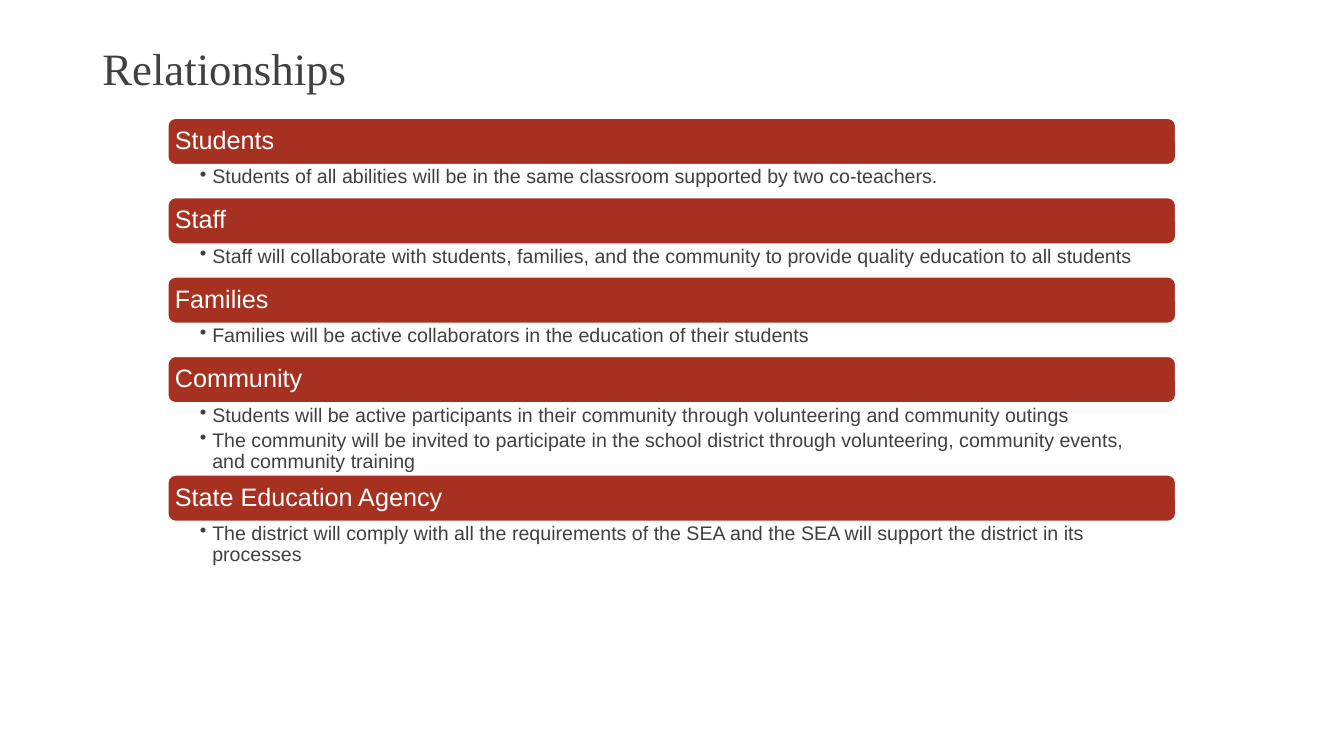
from dataclasses import dataclass

from lxml.etree import SubElement
from pptx import Presentation
from pptx.dml.color import RGBColor
from pptx.enum.shapes import MSO_SHAPE as Shape
from pptx.enum.text import MSO_ANCHOR as Anchor, PP_ALIGN as Align
from pptx.oxml.ns import qn
from pptx.text.text import TextFrame, _Paragraph as Paragraph
from pptx.util import Cm, Pt


@dataclass(frozen=True)
class Theme:
    white: RGBColor = RGBColor(0xFF, 0xFF, 0xFF)
    red: RGBColor = RGBColor(0xA6, 0x31, 0x21)
    gray: RGBColor = RGBColor(0x40, 0x40, 0x40)
    title_font: str = "Times New Roman"
    body_font: str = "Arial"
    title_size: int = 32
    heading_size: int = 18
    bullet_size: int = 14


@dataclass(frozen=True)
class Group:
    heading: str
    bullets: tuple[str, ...]
    body_height: float  # centimetres


THEME = Theme()
LEFT, TOP, WIDTH, BAR_HEIGHT = 4.23, 2.98, 25.4, 1.17
BULLET_INDENT = 0.31
GROUPS = (
    Group("Students", (
        "Students of all abilities will be in the same classroom supported by two co-teachers.",
    ), 0.83),
    Group("Staff", (
        "Staff will collaborate with students, families, and the community to provide "
        "quality education to all students",
    ), 0.83),
    Group("Families", (
        "Families will be active collaborators in the education of their students",
    ), 0.83),
    Group("Community", (
        "Students will be active participants in their community through volunteering "
        "and community outings",
        "The community will be invited to participate in the school district through "
        "volunteering, community events, and community training",
    ), 1.82),
    Group("State Education Agency", (
        "The district will comply with all the requirements of the SEA and the SEA will "
        "support the district in its processes",
    ), 1.17),
)


def set_frame(tf: TextFrame, anchor: Anchor, left: float, top: float,
              right: float, bottom: float) -> None:
    """Wrap the text, anchor it and set its insets in centimetres."""
    tf.word_wrap = True
    tf.vertical_anchor = anchor
    tf.margin_left, tf.margin_top = Cm(left), Cm(top)
    tf.margin_right, tf.margin_bottom = Cm(right), Cm(bottom)


def style(p: Paragraph, font: str, size: int, color: RGBColor) -> None:
    p.alignment = Align.LEFT
    p.line_spacing = 0.9
    for r in p.runs:
        r.font.name = font
        r.font.size = Pt(size)
        r.font.color.rgb = color


def add_bullet(p: Paragraph) -> None:
    pPr = p._p.get_or_add_pPr()
    pPr.set("marL", str(Cm(BULLET_INDENT)))
    pPr.set("indent", str(-Cm(BULLET_INDENT)))
    SubElement(pPr, qn("a:buChar")).set("char", "•")


def add_title(slide, text: str) -> None:
    tf = slide.shapes.add_textbox(Cm(2.33), Cm(1.02), Cm(27.31), Cm(1.52)).text_frame
    set_frame(tf, Anchor.BOTTOM, 0.25, 0.13, 0.25, 0.13)
    tf.text = text
    style(tf.paragraphs[0], THEME.title_font, THEME.title_size, THEME.gray)


def add_bar(slide, heading: str, top: float) -> None:
    sp = slide.shapes.add_shape(Shape.ROUNDED_RECTANGLE, Cm(LEFT), Cm(top),
                                Cm(WIDTH), Cm(BAR_HEIGHT))
    sp.shadow.inherit = False
    sp.fill.solid()
    sp.fill.fore_color.rgb = THEME.red
    sp.line.color.rgb = THEME.white
    sp.line.width = Pt(1)
    tf = sp.text_frame
    set_frame(tf, Anchor.MIDDLE, 0.12, 0.12, 0.12, 0.12)
    tf.text = heading
    style(tf.paragraphs[0], THEME.body_font, THEME.heading_size, THEME.white)


def add_body(slide, group: Group, top: float) -> None:
    tf = slide.shapes.add_textbox(Cm(LEFT), Cm(top), Cm(WIDTH),
                                  Cm(group.body_height)).text_frame
    set_frame(tf, Anchor.TOP, 0.81, 0.06, 0.36, 0.06)
    tf.text = "\n".join(group.bullets)
    for p in tf.paragraphs:
        add_bullet(p)
        style(p, THEME.body_font, THEME.bullet_size, THEME.gray)
        p.space_after = Pt(2.8)


def main() -> None:
    prs = Presentation()
    prs.slide_width, prs.slide_height = Cm(33.87), Cm(19.05)
    slide = prs.slides.add_slide(prs.slide_layouts[6])
    add_title(slide, "Relationships")
    top = TOP
    for group in GROUPS:
        add_bar(slide, group.heading, top)
        add_body(slide, group, top + BAR_HEIGHT)
        top += BAR_HEIGHT + group.body_height
    prs.save("out.pptx")


if __name__ == "__main__":
    main()
